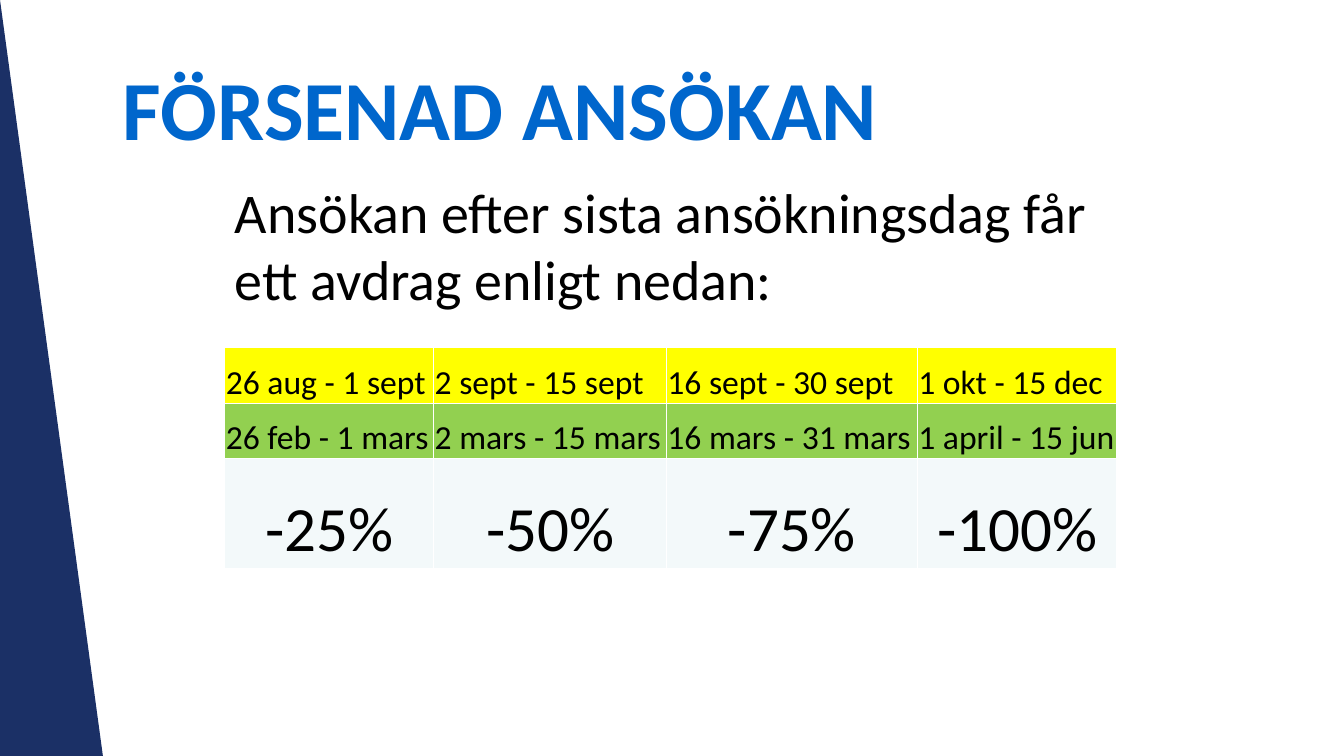
from dataclasses import dataclass

from lxml import etree
from pptx import Presentation
from pptx.dml.color import RGBColor
from pptx.enum.shapes import MSO_SHAPE
from pptx.enum.text import MSO_ANCHOR, MSO_AUTO_SIZE, PP_ALIGN
from pptx.oxml.ns import qn
from pptx.util import Pt

TRIANGLE = MSO_SHAPE.RIGHT_TRIANGLE
TOP, BOTTOM = MSO_ANCHOR.TOP, MSO_ANCHOR.BOTTOM
LEFT, CENTER = PP_ALIGN.LEFT, PP_ALIGN.CENTER
NO_AUTOFIT = MSO_AUTO_SIZE.NONE

TITLE = "FÖRSENAD ANSÖKAN"
INTRO = "Ansökan efter sista ansökningsdag får ett avdrag enligt nedan:"
AUTUMN = ["26 aug - 1 sept", "2 sept - 15 sept", "16 sept - 30 sept", "1 okt - 15 dec"]
SPRING = ["26 feb - 1 mars", "2 mars - 15 mars", "16 mars - 31 mars", "1 april - 15 jun"]
DEDUCTIONS = ["-25%", "-50%", "-75%", "-100%"]


@dataclass(frozen=True)
class Theme:
    font: str = "Calibri"
    navy: str = "1B3066"
    blue: str = "0066CC"
    black: str = "000000"
    white: str = "FFFFFF"
    yellow: str = "FFFF00"
    green: str = "92D050"
    pale: str = "F3F9FA"
    title_size: int = 60
    intro_size: int = 40
    date_size: int = 24
    deduction_size: int = 45


THEME = Theme()

# Page geometry in points
PAGE_WIDTH, PAGE_HEIGHT = 960, 540
WEDGE_WIDTH = 73.5
TITLE_BOX = (80.6, 36.7, 638, 80)
INTRO_BOX = (160.6, 123.1, 644.4, 104.4)
TABLE_LEFT, TABLE_TOP = 160.6, 248.4
COLUMN_WIDTHS = [149.2, 166.3, 179.2, 142.6]
CELL_INSET = 0.7
BORDER_WIDTH = 1

# Texts, fill, type size, alignment, row height
TABLE_ROWS = [
    (AUTUMN, THEME.yellow, THEME.date_size, LEFT, 39.6),
    (SPRING, THEME.green, THEME.date_size, LEFT, 39.6),
    (DEDUCTIONS, THEME.pale, THEME.deduction_size, CENTER, 78.5),
]


def style_paragraph(para, size, color, align=LEFT, bold=False):
    para.alignment = align
    para.line_spacing = 1.0
    para.space_before = Pt(0)
    font = para.font
    font.name, font.size, font.bold = THEME.font, Pt(size), bold
    font.color.rgb = RGBColor.from_string(color)


def fill_placeholder(shape, box, text, size, color, bold=False):
    shape.left, shape.top, shape.width, shape.height = map(Pt, box)
    frame = shape.text_frame
    frame.text = text
    frame.word_wrap = True
    frame.auto_size = NO_AUTOFIT
    frame.vertical_anchor = TOP
    para = frame.paragraphs[0]
    properties = para._p.get_or_add_pPr()
    properties.set("marL", "0")
    properties.set("indent", "0")
    etree.SubElement(properties, qn("a:buNone"))
    style_paragraph(para, size, color, bold=bold)


def add_borders(cell):
    properties = cell._tc.get_or_add_tcPr()
    for side in ("lnL", "lnR", "lnT", "lnB"):
        line = etree.SubElement(properties, qn(f"a:{side}"), w=str(Pt(BORDER_WIDTH)))
        fill = etree.SubElement(line, qn("a:solidFill"))
        etree.SubElement(fill, qn("a:srgbClr"), val=THEME.white)


def fill_cell(cell, text, fill, size, align):
    add_borders(cell)
    cell.fill.solid()
    cell.fill.fore_color.rgb = RGBColor.from_string(fill)
    cell.margin_left = cell.margin_right = cell.margin_top = Pt(CELL_INSET)
    cell.margin_bottom = Pt(0)
    cell.vertical_anchor = BOTTOM
    cell.text = text
    style_paragraph(cell.text_frame.paragraphs[0], size, THEME.black, align)


def add_wedge(page):
    wedge = page.shapes.add_shape(TRIANGLE, 0, 0, Pt(WEDGE_WIDTH), Pt(PAGE_HEIGHT))
    wedge.shadow.inherit = False
    wedge.fill.solid()
    wedge.fill.fore_color.rgb = RGBColor.from_string(THEME.navy)
    wedge.line.fill.background()


def add_deduction_table(page):
    height = sum(row[-1] for row in TABLE_ROWS)
    table = page.shapes.add_table(
        len(TABLE_ROWS), len(COLUMN_WIDTHS),
        Pt(TABLE_LEFT), Pt(TABLE_TOP), Pt(sum(COLUMN_WIDTHS)), Pt(height),
    ).table
    table.first_row = table.horz_banding = False
    for column, width in zip(table.columns, COLUMN_WIDTHS):
        column.width = Pt(width)
    for row, (texts, fill, size, align, row_height) in zip(table.rows, TABLE_ROWS):
        row.height = Pt(row_height)
        for cell, text in zip(row.cells, texts):
            fill_cell(cell, text, fill, size, align)


def main():
    deck = Presentation()
    deck.slide_width, deck.slide_height = Pt(PAGE_WIDTH), Pt(PAGE_HEIGHT)
    page = deck.slides.add_slide(deck.slide_layouts.get_by_name("Title and Content"))
    add_wedge(page)
    title, intro = page.shapes.title, page.placeholders[1]
    fill_placeholder(title, TITLE_BOX, TITLE, THEME.title_size, THEME.blue, bold=True)
    fill_placeholder(intro, INTRO_BOX, INTRO, THEME.intro_size, THEME.black)
    add_deduction_table(page)
    deck.save("out.pptx")


if __name__ == "__main__":
    main()
